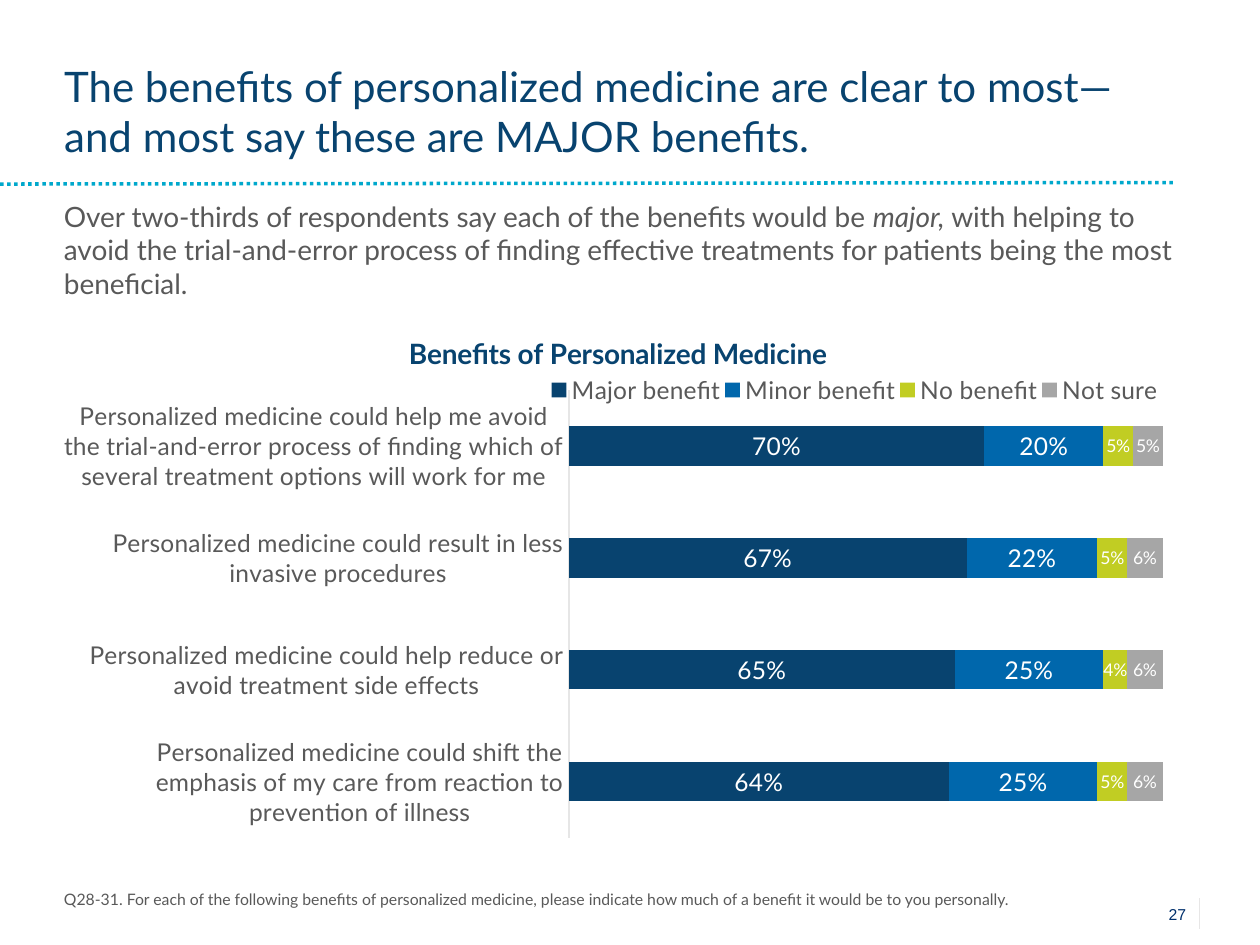
import pptx
import pptx.chart.data
import pptx.dml.color
import pptx.enum.chart
import pptx.enum.dml
import pptx.enum.shapes
import pptx.enum.text
import pptx.oxml
import pptx.oxml.ns
import pptx.util

Cm, Pt = pptx.util.Cm, pptx.util.Pt
RGBColor = pptx.dml.color.RGBColor
PP_ALIGN = pptx.enum.text.PP_ALIGN

NAVY = RGBColor(0x08, 0x43, 0x6F)
BLUE = RGBColor(0x00, 0x67, 0xAC)
LIME = RGBColor(0xC1, 0xCD, 0x23)
SILVER = RGBColor(0xA6, 0xA6, 0xA6)
GRAY = RGBColor(0x59, 0x59, 0x59)
WHITE = RGBColor(0xFF, 0xFF, 0xFF)
PAGE_BLUE = RGBColor(0x00, 0x30, 0x6C)
CYAN = RGBColor(0x00, 0xA8, 0xCC)
PALE = RGBColor(0xE7, 0xE6, 0xE6)
AXIS = RGBColor(0xE6, 0xE6, 0xE6)


def set_font(font, size, color, name="Lato", **extra):
    values = {"size": Pt(size), "name": name, **extra}
    for key, value in values.items():
        setattr(font, key, value)
    font.color.rgb = color


def set_layout(element, index, target=None, **sizes):
    """Give a chart part a manual layout, as fractions of the chart area."""
    for old in element.findall(pptx.oxml.ns.qn("c:layout")):
        element.remove(old)
    inner = f'<c:layoutTarget val="{target}"/>' if target else ""
    inner += "".join(f'<c:{k}Mode val="edge"/>' for k in "xy")
    inner += "".join(f'<c:{k} val="{v}"/>' for k, v in sizes.items())
    element.insert(index, pptx.oxml.parse_xml(
        f'<c:layout {pptx.oxml.ns.nsdecls("c")}>'
        f'<c:manualLayout>{inner}</c:manualLayout></c:layout>'))


prs = pptx.Presentation()
prs.slide_width, prs.slide_height = Cm(25.4), Cm(19.05)
s = prs.slides.add_slide(prs.slide_layouts[5])

# Title
title = s.shapes.title
title.left, title.top, title.width, title.height = Cm(1.04), Cm(0.86), Cm(22.17), Cm(2.74)
tf = title.text_frame
tf.auto_size = pptx.enum.text.MSO_AUTO_SIZE.NONE
tf.vertical_anchor = pptx.enum.text.MSO_ANCHOR.MIDDLE
p = tf.paragraphs[0]
p.alignment = PP_ALIGN.LEFT
p.space_before = Pt(4.8)
r = p.add_run()
r.text = "The benefits of personalized medicine are clear to most—and most say these are MAJOR benefits."
set_font(r.font, 24, NAVY)

# Chart
series = [
    ("Major benefit", (0.70, 0.67, 0.65, 0.64), NAVY, 14),
    ("Minor benefit", (0.20, 0.22, 0.25, 0.25), BLUE, 14),
    ("No benefit", (0.05, 0.05, 0.04, 0.05), LIME, 10),
    ("Not sure", (0.05, 0.06, 0.06, 0.06), SILVER, 10),
]
data = pptx.chart.data.CategoryChartData(number_format="0%")
data.categories = [
    "Personalized medicine could help me avoid the trial-and-error process of "
    "finding which of several treatment options will work for me",
    "Personalized medicine could result in less invasive procedures",
    "Personalized medicine could help reduce or avoid treatment side effects",
    "Personalized medicine could shift the emphasis of my care from reaction to "
    "prevention of illness",
]
for name, values, color, size in series:
    data.add_series(name, values)

chart = s.shapes.add_chart(
    pptx.enum.chart.XL_CHART_TYPE.BAR_STACKED_100,
    Cm(1.27), Cm(6.17), Cm(22.17), Cm(11.28), data).chart
set_font(chart.font, 10, GRAY)

chart.has_title = True
p = chart.chart_title.text_frame.paragraphs[0]
r = p.add_run()
r.text = "Benefits of Personalized Medicine"
set_font(r.font, 16, NAVY, bold=True)
set_layout(chart.chart_title._element, 1, x=0.31, y=0.04)

chart.has_legend = True
chart.legend.position = pptx.enum.chart.XL_LEGEND_POSITION.BOTTOM
chart.legend.include_in_layout = False
set_font(chart.legend.font, 14, GRAY)
set_layout(chart.legend._element, 1, x=0.44, y=0.12, w=0.56, h=0.06)

axis = chart.category_axis
axis.reverse_order = True
axis.major_tick_mark = pptx.enum.chart.XL_TICK_MARK.NONE
axis.format.line.color.rgb = AXIS
axis.format.line.width = Pt(0.75)
set_font(axis.tick_labels.font, 14, GRAY)

axis = chart.value_axis
axis.visible = False
axis.has_major_gridlines = False
axis.minimum_scale, axis.maximum_scale = 0, 1

plot = chart.plots[0]
plot.gap_width, plot.overlap = 182, 100
plot.vary_by_categories = False
for ser, (name, values, color, size) in zip(plot.series, series):
    ser.format.fill.solid()
    ser.format.fill.fore_color.rgb = color
    labels = ser.data_labels
    labels.show_value = True
    labels.position = pptx.enum.chart.XL_LABEL_POSITION.CENTER
    labels.number_format = "0%"
    labels.number_format_is_linked = False
    set_font(labels.font, size, WHITE)
set_layout(chart._chartSpace.chart.plotArea, 0, "inner", x=0.46, y=0.15, w=0.54, h=0.8)

# Summary, footnote and page number
texts = [
    ((1.04, 3.89, 23.04, 2.31), 16, GRAY, "Lato", PP_ALIGN.LEFT, [
        ("Over two-thirds of respondents say each of the benefits would be ", False),
        ("major, ", True),
        ("with helping to avoid the trial-and-error process of finding effective "
         "treatments for patients being the most beneficial.", False)]),
    ((1.04, 17.81, 20.52, 0.64), 9, GRAY, "Lato", PP_ALIGN.LEFT, [
        ("Q28-31. For each of the following benefits of personalized medicine, please "
         "indicate how much of a benefit it would be to you personally.", False)]),
    ((22.15, 18.11, 2.01, 0.61), 9, PAGE_BLUE, "Arial", PP_ALIGN.RIGHT, [("27", False)]),
]
for box, size, color, font_name, align, runs in texts:
    tf = s.shapes.add_textbox(*map(Cm, box)).text_frame
    tf.word_wrap = True
    p = tf.paragraphs[0]
    p.alignment = align
    for text, italic in runs:
        r = p.add_run()
        r.text = text
        set_font(r.font, size, color, font_name, italic=italic)

# Rule under the title and bar beside the page number
rules = [
    ((0, 3.71, 23.7, 3.68), CYAN, 2, pptx.enum.dml.MSO_LINE.ROUND_DOT),
    ((24.18, 18.11, 24.18, 18.72), PALE, 0.75, None),
]
for ends, color, width, dash in rules:
    line = s.shapes.add_connector(pptx.enum.shapes.MSO_CONNECTOR.STRAIGHT, *map(Cm, ends))
    line.line.color.rgb = color
    line.line.width = Pt(width)
    line.line.dash_style = dash
    line._element.spPr.append(pptx.oxml.parse_xml(
        f'<a:effectLst {pptx.oxml.ns.nsdecls("a")}/>'))

prs.save("out.pptx")
